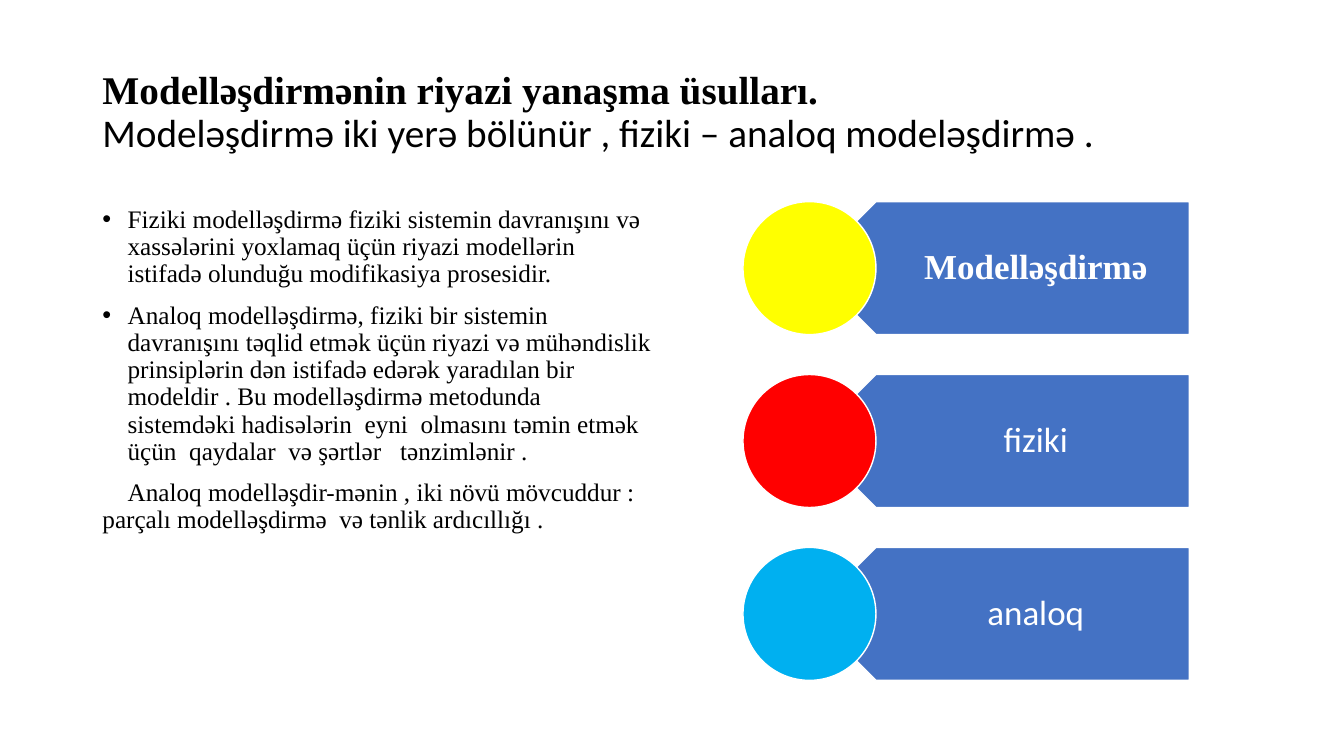
import copy
from dataclasses import dataclass

import pptx
import pptx.dml.color
import pptx.enum.shapes
import pptx.enum.text
import pptx.oxml
import pptx.oxml.ns
import pptx.util

Pt = pptx.util.Pt
Color = pptx.dml.color.RGBColor
Shapes = pptx.enum.shapes.MSO_SHAPE
Align = pptx.enum.text.PP_ALIGN
Anchor = pptx.enum.text.MSO_ANCHOR


@dataclass(frozen=True)
class Theme:
    serif: str = "Times New Roman"
    sans: str = "Calibri"
    ink: str = "000000"
    white: str = "FFFFFF"
    plate: str = "4472C4"
    title_size: float = 28
    body_size: float = 18
    label_size: float = 25
    line_spacing: float = 0.9


@dataclass(frozen=True)
class Item:
    text: str
    first_indent: float
    left_margin: float = 0
    bullet: bool = False


@dataclass(frozen=True)
class Branch:
    label: str
    disc: str
    font: str
    bold: bool = False


THEME = Theme()

TITLE = ("Modelləşdirmənin riyazi yanaşma üsulları.\n"
         "Modeləşdirmə iki yerə bölünür , fiziki – analoq modeləşdirmə .")

ITEMS = [
    Item("Fiziki modelləşdirmə fiziki sistemin davranışını və xassələrini yoxlamaq "
         "üçün riyazi modellərin istifadə olunduğu modifikasiya prosesidir.",
         -18, 18, True),
    Item("Analoq modelləşdirmə, fiziki bir sistemin davranışını təqlid etmək üçün "
         "riyazi və mühəndislik prinsiplərin dən istifadə edərək yaradılan bir "
         "modeldir . Bu modelləşdirmə metodunda sistemdəki hadisələrin  eyni  "
         "olmasını təmin etmək üçün  qaydalar  və şərtlər   tənzimlənir .",
         -18, 18, True),
    Item("Analoq modelləşdir-mənin , iki növü mövcuddur : parçalı modelləşdirmə  "
         "və tənlik ardıcıllığı .", 18),
]

BRANCHES = [
    Branch("Modelləşdirmə", "FFFF00", THEME.serif, True),
    Branch("fiziki", "FF0000", THEME.sans),
    Branch("analoq", "00B0F0", THEME.sans),
]

# Branch diagram geometry, in points
DISC_LEFT, DIAGRAM_TOP, DISC_SIZE, PITCH = 530.7, 144, 95, 123.5
PLATE_LEFT, PLATE_WIDTH = DISC_LEFT + DISC_SIZE / 2, 271.4
LABEL_LEFT = PLATE_LEFT + DISC_SIZE / 4
LABEL_WIDTH = PLATE_LEFT + PLATE_WIDTH - LABEL_LEFT


def place(shape, left: float, top: float, width: float, height: float) -> None:
    shape.left, shape.top = Pt(left), Pt(top)
    shape.width, shape.height = Pt(width), Pt(height)


def style(span, font: str, size: float, color: str, bold: bool = False) -> None:
    span.font.name, span.font.size, span.font.bold = font, Pt(size), bold
    span.font.color.rgb = Color.from_string(color)


def set_bullet(para, item: Item) -> None:
    properties = para._p.get_or_add_pPr()
    properties.set("marL", str(Pt(item.left_margin)))
    properties.set("indent", str(Pt(item.first_indent)))
    namespace = pptx.oxml.ns.nsdecls("a")
    if item.bullet:
        marks = [f'<a:buFont {namespace} typeface="Arial"/>',
                 f'<a:buChar {namespace} char="•"/>']
    else:
        marks = [f"<a:buNone {namespace}/>"]
    for mark in marks:
        properties.append(pptx.oxml.parse_xml(mark))


def fill_title(box) -> None:
    place(box, 66, 28.75, 828, 104.4)
    frame = box.text_frame
    frame.auto_size = pptx.enum.text.MSO_AUTO_SIZE.NONE
    frame.vertical_anchor = Anchor.MIDDLE
    para = frame.paragraphs[0]
    para.text = TITLE
    para.alignment, para.line_spacing = Align.LEFT, THEME.line_spacing
    heading, subheading = para.runs
    style(heading, THEME.serif, THEME.title_size, THEME.ink, True)
    style(subheading, THEME.sans, THEME.title_size, THEME.ink)
    # The line break takes the size of the heading
    line_break = para._p.find(pptx.oxml.ns.qn("a:br"))
    line_break.append(copy.deepcopy(heading._r.rPr))


def fill_body(box) -> None:
    place(box, 66, 144, 408, 342.6)
    frame = box.text_frame
    frame.auto_size = pptx.enum.text.MSO_AUTO_SIZE.NONE
    frame.text = "\n".join(item.text for item in ITEMS)
    for para, item in zip(frame.paragraphs, ITEMS):
        para.line_spacing, para.space_before = THEME.line_spacing, Pt(10)
        set_bullet(para, item)
        style(para.runs[0], THEME.serif, THEME.body_size, THEME.ink)


def add_outlined(page, kind, color: str, left: float, top: float, width: float):
    shape = page.shapes.add_shape(kind, Pt(left), Pt(top), Pt(width), Pt(DISC_SIZE))
    shape.shadow.inherit = False
    shape.fill.solid()
    shape.fill.fore_color.rgb = Color.from_string(color)
    shape.line.color.rgb = Color.from_string(THEME.white)
    shape.line.width = Pt(1)
    return shape


def add_branch(page, branch: Branch, top: float) -> None:
    plate = add_outlined(page, Shapes.PENTAGON, THEME.plate, PLATE_LEFT, top, PLATE_WIDTH)
    plate.rotation = 180
    label = page.shapes.add_textbox(Pt(LABEL_LEFT), Pt(top), Pt(LABEL_WIDTH), Pt(DISC_SIZE))
    frame = label.text_frame
    frame.word_wrap, frame.vertical_anchor = True, Anchor.MIDDLE
    frame.margin_left, frame.margin_right = Pt(41.8), Pt(13.7)
    frame.margin_top = frame.margin_bottom = Pt(7.2)
    frame.text = branch.label
    para = frame.paragraphs[0]
    para.alignment, para.line_spacing = Align.CENTER, THEME.line_spacing
    style(para.runs[0], branch.font, THEME.label_size, THEME.white, branch.bold)
    add_outlined(page, Shapes.OVAL, branch.disc, DISC_LEFT, top, DISC_SIZE)


def main() -> None:
    deck = pptx.Presentation()
    deck.slide_width, deck.slide_height = Pt(960), Pt(540)
    page = deck.slides.add_slide(deck.slide_layouts[1])

    # Title and list
    fill_title(page.shapes.title)
    fill_body(page.placeholders[1])

    # Branch diagram
    for row, branch in enumerate(BRANCHES):
        add_branch(page, branch, DIAGRAM_TOP + row * PITCH)

    deck.save("out.pptx")


if __name__ == "__main__":
    main()
